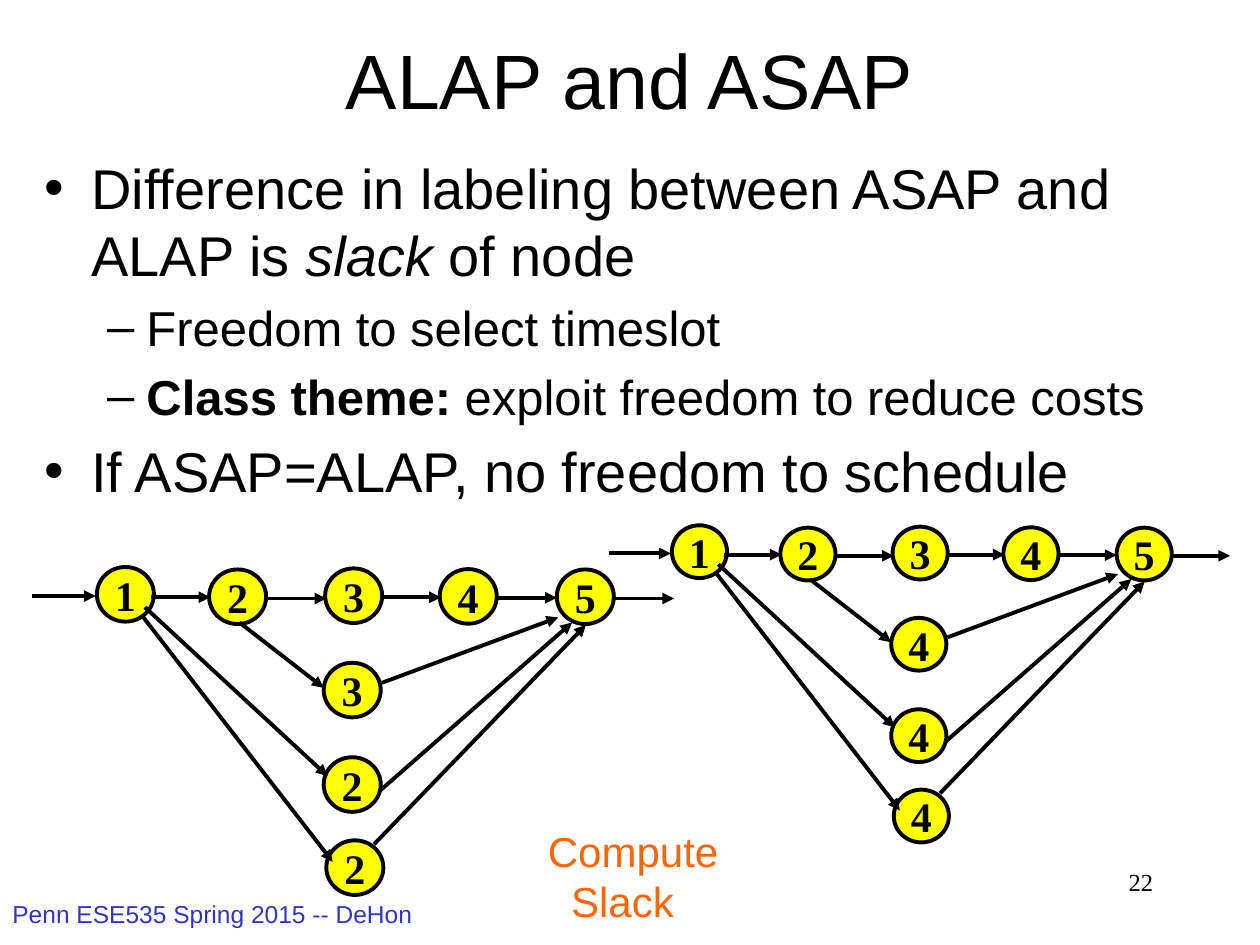
from pptx import Presentation
from pptx.dml.color import RGBColor
from pptx.enum.shapes import MSO_CONNECTOR, MSO_SHAPE
from pptx.enum.text import MSO_ANCHOR, MSO_AUTO_SIZE, PP_ALIGN
from pptx.oxml.ns import qn
from pptx.util import Pt
from lxml.etree import SubElement


def rgb(color):
    return RGBColor.from_string(color)


def add_text(p, text, size, font="Arial", color="000000", bold=False, italic=False):
    r = p.add_run()
    r.text = text
    r.font.size, r.font.name = Pt(size), font
    r.font.bold, r.font.italic = bold, italic
    r.font.color.rgb = rgb(color)


prs = Presentation()
prs.slide_width, prs.slide_height = Pt(720), Pt(540)
s = prs.slides.add_slide(prs.slide_layouts[1])

# Title
title = s.shapes.title
title.left, title.top, title.width, title.height = Pt(54), Pt(0), Pt(612), Pt(90)
tf = title.text_frame
tf.vertical_anchor = MSO_ANCHOR.MIDDLE
tf.auto_size = MSO_AUTO_SIZE.NONE
p = tf.paragraphs[0]
p.alignment = PP_ALIGN.CENTER
add_text(p, "ALAP and ASAP", 44)

# Bullet list: level, then (text, style) runs
bullets = [
    (0, [("Difference in labeling between ASAP and ALAP is ", {}),
         ("slack", {"italic": True}), (" of node", {})]),
    (1, [("Freedom to select timeslot", {})]),
    (1, [("Class theme:", {"bold": True}), (" exploit freedom to reduce costs", {})]),
    (0, [("If ASAP=ALAP, no freedom to schedule", {})]),
]
levels = [(32, 27, -27, "•"), (28, 58.5, -22.5, "–")]  # size, margin, indent, bullet
body = s.placeholders[1]
body.left, body.top, body.width, body.height = Pt(18), Pt(84), Pt(648), Pt(324)
tf = body.text_frame
tf.auto_size = MSO_AUTO_SIZE.NONE
for i, (level, runs) in enumerate(bullets):
    p = tf.paragraphs[0] if i == 0 else tf.add_paragraph()
    p.level = level
    size, margin, indent, char = levels[level]
    pPr = p._p.get_or_add_pPr()
    pPr.set("marL", str(Pt(margin)))
    pPr.set("indent", str(Pt(indent)))
    SubElement(pPr, qn("a:buChar")).set("char", char)
    for text, style in runs:
        add_text(p, text, size, **style)

# Graph layout, relative to the graph's top left corner
nodes = [(37.4, 0), (101.5, 1.4), (167.8, 0.8), (233.3, 1.2), (300.2, 1.4),
         (167, 54.7), (167, 108.7), (168.5, 156.2)]
edges = [
    (0, 16.6, 36.7, 16.6), (68.4, 17.3, 102.2, 17.3), (134.6, 18, 168.5, 18),
    (200.2, 17.3, 234, 17.3), (266.4, 17.6, 300.2, 17.6), (333.4, 18, 367.2, 18),
    (118.8, 31.7, 167, 69.1), (200.2, 66.2, 301, 28.8),
    (198.7, 128.2, 308.9, 31.7), (64.8, 23, 169.2, 119.5),
    (63.4, 28.1, 172.1, 168.5), (195.8, 158.4, 316.8, 33.1),
]
graphs = [(18, 324, 1, "12345322"), (347.8, 300.2, 0.967, "12345444")]

for left, top, scale, labels in graphs:
    graph = s.shapes.add_group_shape().shapes

    # Numbered nodes
    for (x, y), label in zip(nodes, labels):
        node = graph.add_shape(MSO_SHAPE.OVAL, Pt(left + x * scale), Pt(top + y * scale),
                               Pt(32.6 * scale), Pt(31.2 * scale))
        node.shadow.inherit = False
        node.fill.solid()
        node.fill.fore_color.rgb = rgb("FFFF00")
        node.line.color.rgb = rgb("000000")
        node.line.width = Pt(2.25)
        tf = node.text_frame
        tf.word_wrap = False
        tf.vertical_anchor = MSO_ANCHOR.MIDDLE
        p = tf.paragraphs[0]
        p.alignment = PP_ALIGN.CENTER
        add_text(p, label, 24, font="Times New Roman", bold=True)

    # Arrows
    for x1, y1, x2, y2 in edges:
        edge = graph.add_connector(
            MSO_CONNECTOR.STRAIGHT, Pt(left + x1 * scale), Pt(top + y1 * scale),
            Pt(left + x2 * scale), Pt(top + y2 * scale))
        edge.line.color.rgb = rgb("000000")
        edge.line.width = Pt(2.25)
        SubElement(edge.line._get_or_add_ln(), qn("a:tailEnd")).set("type", "triangle")
        SubElement(edge._element.spPr, qn("a:effectLst"))

# Footer, page number and exercise prompt: box, wrap, alignment, lines, style
notes = [
    ((0, 510, 276, 30), True, PP_ALIGN.LEFT, [("Penn ESE535 Spring 2015 -- DeHon", 0)],
     {"size": 14, "color": "3333CC"}),
    ((516, 492, 150, 36), True, PP_ALIGN.RIGHT, [("22", 0)],
     {"size": 14, "font": "Times New Roman"}),
    ((306, 468, 113, 65.5), False, PP_ALIGN.LEFT, [("Compute", 0), ("Slack", 13.3)],
     {"size": 24, "color": "FF6600"}),
]
for box, wrap, align, lines, style in notes:
    tf = s.shapes.add_textbox(*map(Pt, box)).text_frame
    tf.word_wrap = wrap
    for i, (text, margin) in enumerate(lines):
        p = tf.paragraphs[0] if i == 0 else tf.add_paragraph()
        p.alignment = align
        p._p.get_or_add_pPr().set("marL", str(Pt(margin)))
        add_text(p, text, **style)

prs.save("out.pptx")
